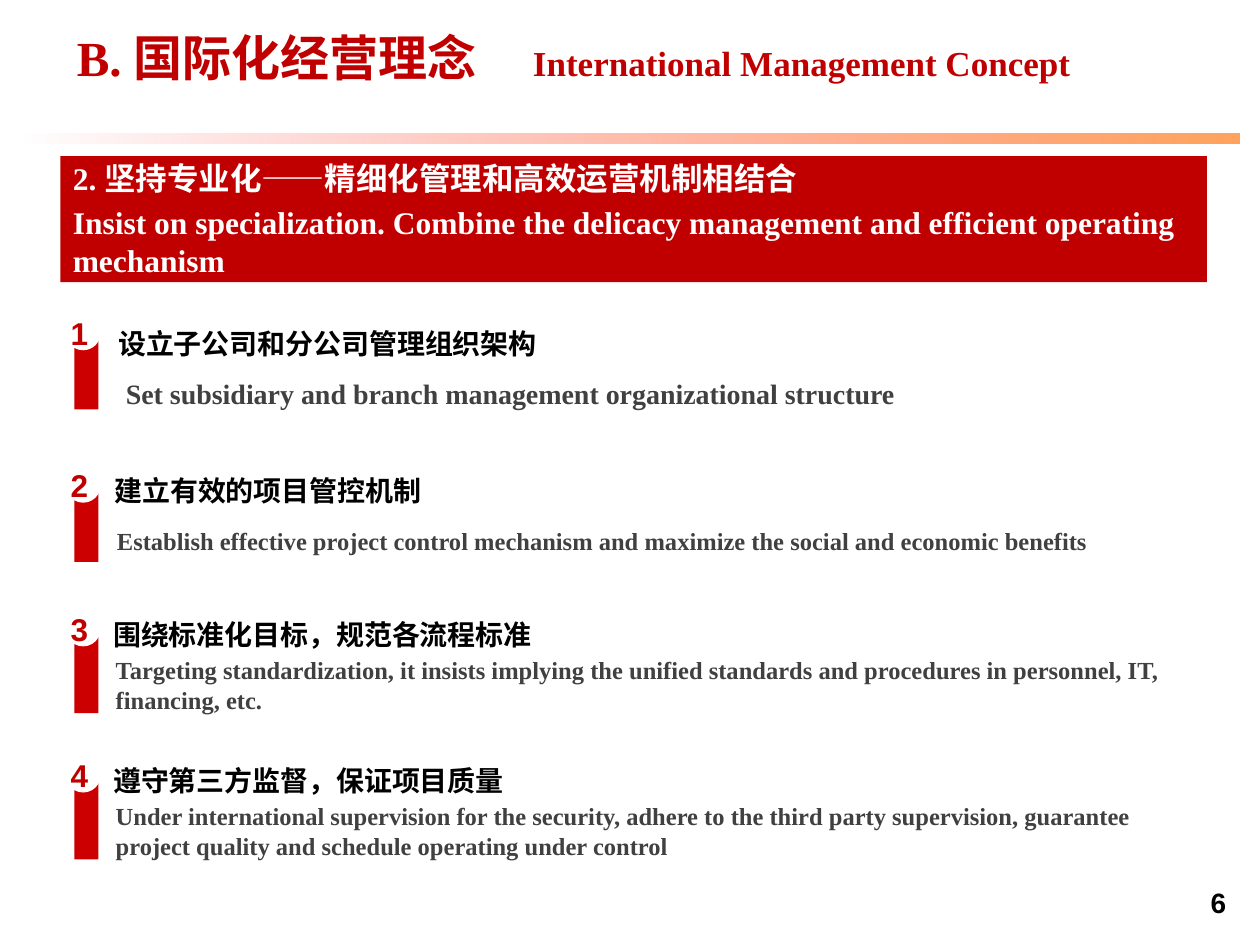
from lxml import etree
from pptx import Presentation
from pptx.dml import color
from pptx.enum import shapes, text
from pptx.oxml import ns
from pptx.util import Inches, Pt

# Content
TITLE = "B. 国际化经营理念\tInternational Management Concept"
BANNER = [
    "2. 坚持专业化——精细化管理和高效运营机制相结合",
    "Insist on specialization. Combine the delicacy management "
    "and efficient operating mechanism",
]
# heading, detail, badge top, bar height, heading (x, y), detail (x, y, w, h), detail style
ITEMS = [
    ("设立子公司和分公司管理组织架构",
     "Set subsidiary and branch management organizational structure",
     2.5, 0.63, (0.84, 2.54), (0.9, 2.77, 7.18, 0.71), "lead"),
    ("建立有效的项目管控机制",
     "Establish effective project control mechanism and maximize "
     "the social and economic benefits",
     3.71, 0.63, (0.81, 3.71), (0.83, 4.06, 8.86, 0.47), "note"),
    ("围绕标准化目标，规范各流程标准",
     "Targeting standardization, it insists implying the unified "
     "standards and procedures in personnel, IT, financing, etc.",
     4.85, 0.69, (0.8, 4.85), (0.82, 5.2, 8.64, 0.47), "note"),
    ("遵守第三方监督，保证项目质量",
     "Under international supervision for the security, adhere to the "
     "third party supervision, guarantee project quality and schedule "
     "operating under control",
     6.01, 0.69, (0.8, 6.01), (0.82, 6.36, 8.87, 0.47), "note"),
]
PAGE = "6"

# Theme: type styles are (face, size, colour)
SERIF, SANS, HAN = "Times New Roman", "Arial", "Noto Sans CJK SC"
THEME = {
    "title": (SERIF, 28, "C00000"),
    "sub": (SERIF, 20, "C00000"),
    "banner": (SERIF, 18, "FFFFFF"),
    "badge": (SANS, 18, "C00000"),
    "head": (HAN, 16, "000000"),
    "lead": (SERIF, 16, "404040"),
    "note": (SERIF, 14, "404040"),
    "page": (SANS, 16, "000000"),
    "red": "C00000", "bar": "CC0000", "white": "FFFFFF",
    "rule": [("FF0000", 0), ("FF750D", 67)],
}
RECT, OVAL = shapes.MSO_SHAPE.RECTANGLE, shapes.MSO_SHAPE.OVAL
TOP, MID = text.MSO_ANCHOR.TOP, text.MSO_ANCHOR.MIDDLE
LEFT, RIGHT = text.PP_ALIGN.LEFT, text.PP_ALIGN.RIGHT


def rgb(tone):
    return color.RGBColor.from_string(tone)


def style(run, name):
    face, size, tone = THEME[name]
    for key, val in {"name": face, "size": Pt(size), "bold": True}.items():
        setattr(run.font, key, val)
    run.font.color.rgb = rgb(tone)
    ea = etree.SubElement(run.font._element, ns.qn("a:ea"))
    ea.set("typeface", HAN)
    run.font._element.find(ns.qn("a:latin")).addnext(ea)


def write(shape, lines, name, anchor=TOP, align=LEFT, wrap=True):
    frame = shape.text_frame
    frame.word_wrap, frame.vertical_anchor = wrap, anchor
    for i, line in enumerate(lines):
        para = frame.add_paragraph() if i else frame.paragraphs[0]
        para.alignment = align
        if i:
            para.space_before = Pt(0.2 * THEME[name][1])
        run = para.add_run()
        run.text = line
        style(run, name)


def block(slide, kind, box, tone):
    shape = slide.shapes.add_shape(kind, *map(Inches, box))
    shape.shadow.inherit = False
    shape.line.fill.background()
    shape.fill.solid()
    shape.fill.fore_color.rgb = rgb(tone)
    return shape


def label(slide, box, line, name, **fmt):
    write(slide.shapes.add_textbox(*map(Inches, box)), [line], name, **fmt)


def rule(slide):
    bar = block(slide, RECT, (0.11, 1.06, 9.73, 0.08), THEME["white"])
    bar.fill.gradient()
    bar.fill.gradient_angle = 0
    for stop, (tone, alpha) in zip(bar.fill.gradient_stops, THEME["rule"]):
        stop.color.rgb = rgb(tone)
    for node, (tone, alpha) in zip(bar._element.spPr.iter(ns.qn("a:srgbClr")),
                                   THEME["rule"]):
        etree.SubElement(node, ns.qn("a:alpha")).set("val", str(alpha * 1000))


def heading(slide):
    title = slide.shapes.title
    box = dict(left=0.51, top=0.17, width=9.16, height=0.57)
    for key, val in box.items():
        setattr(title, key, Inches(val))
    frame = title.text_frame
    frame.auto_size = text.MSO_AUTO_SIZE.NONE
    frame.vertical_anchor = TOP
    para = frame.paragraphs[0]
    para.alignment = LEFT
    # Tab stop holds the gap before the English title
    tabs = etree.SubElement(para._p.get_or_add_pPr(), ns.qn("a:tabLst"))
    tab = etree.SubElement(tabs, ns.qn("a:tab"))
    tab.set("pos", str(Inches(3.62)))
    tab.set("algn", "l")
    main, sub = TITLE.split("\t")
    for line, name in ((main + "\t", "title"), (sub, "sub")):
        run = para.add_run()
        run.text = line
        style(run, name)


def item(slide, num, row):
    head, note, top, tall, spot, box, name = row
    block(slide, RECT, (0.59, top + 0.12, 0.19, tall), THEME["bar"])
    badge = block(slide, OVAL, (0.52, top, 0.28, 0.28), THEME["white"])
    for side in ("left", "right", "top", "bottom"):
        setattr(badge.text_frame, "margin_" + side, 0)
    write(badge, [str(num)], "badge", anchor=MID, wrap=False)
    label(slide, (*spot, 6.5, 0.37), head, "head")
    label(slide, box, note, name, anchor=MID)


def main():
    deck = Presentation()
    deck.slide_width, deck.slide_height = Inches(10), Inches(7.5)
    slide = deck.slides.add_slide(deck.slide_layouts[5])

    # Title and rule
    rule(slide)
    heading(slide)

    # Banner
    banner = block(slide, RECT, (0.48, 1.24, 9.1, 1), THEME["red"])
    write(banner, BANNER, "banner", anchor=MID)

    # Numbered points
    for num, row in enumerate(ITEMS, 1):
        item(slide, num, row)

    # Page number
    label(slide, (7.5, 6.98, 2.33, 0.52), PAGE, "page", align=RIGHT)
    deck.save("out.pptx")


if __name__ == "__main__":
    main()
